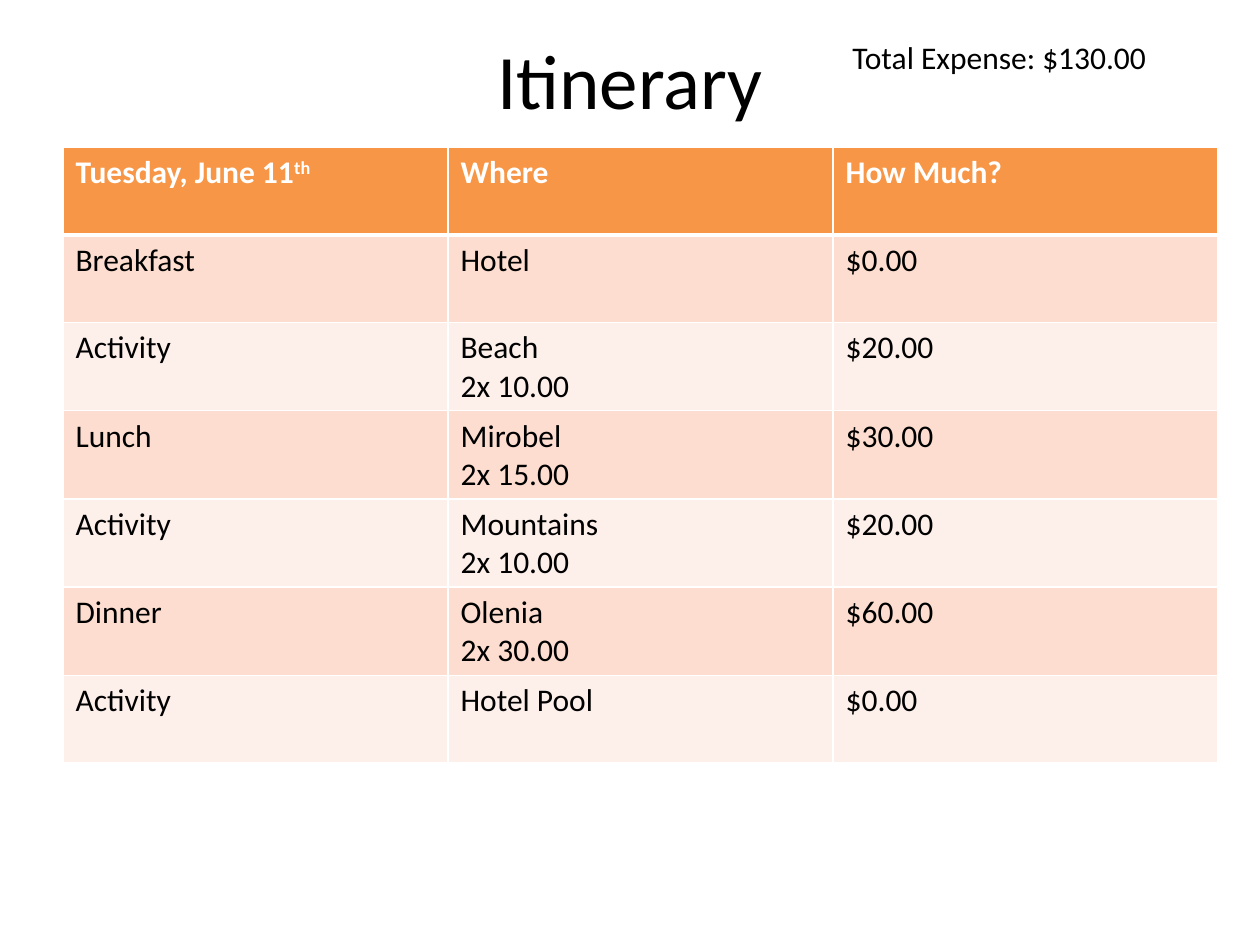
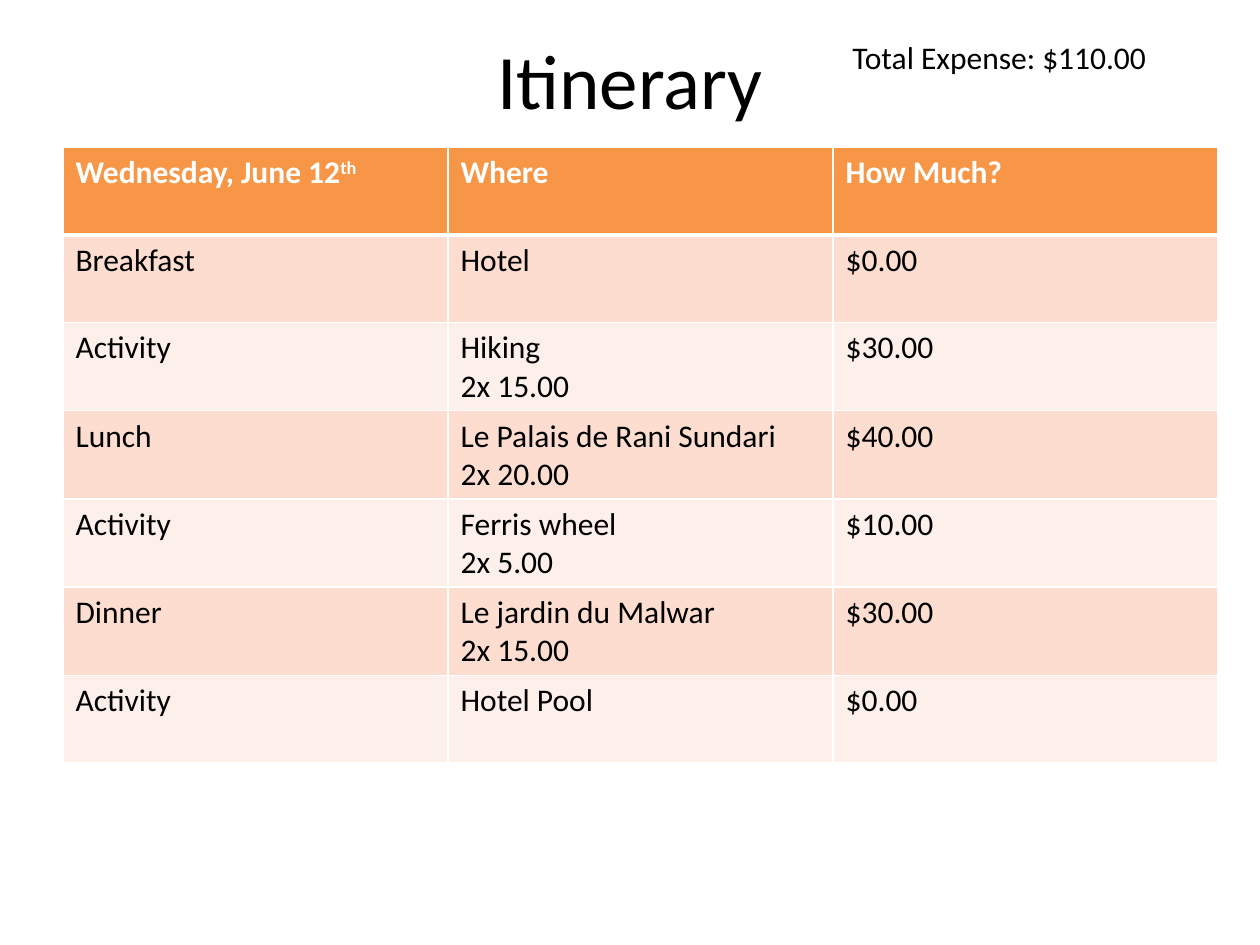
from pptx import Presentation
from pptx.dml.color import RGBColor
from pptx.enum.text import MSO_ANCHOR, PP_ALIGN
from pptx.oxml import parse_xml
from pptx.oxml.ns import nsdecls
from pptx.util import Inches, Pt

# Shared look
ORANGE = RGBColor(0xF7, 0x96, 0x46)
PEACH = RGBColor(0xFC, 0xDD, 0xCF)
CREAM = RGBColor(0xFD, 0xEF, 0xE9)
WHITE = RGBColor(0xFF, 0xFF, 0xFF)
BLACK = RGBColor(0x00, 0x00, 0x00)
TITLE = {"name": "Calibri", "size": Pt(44)}
BODY = {"name": "Calibri", "size": Pt(18), "bold": False}
HEADER = {**BODY, "bold": True}

# Each day: date, then slot, place and price per person
TRAVELLERS = 2
DAYS = [
    ("Tuesday, June 11", [
        ("Breakfast", "Hotel", 0), ("Activity", "Beach", 10),
        ("Lunch", "Mirobel", 15), ("Activity", "Mountains", 10),
        ("Dinner", "Olenia", 30), ("Activity", "Hotel Pool", 0)]),
    ("Wednesday, June 12", [
        ("Breakfast", "Hotel", 0), ("Activity", "Hiking", 15),
        ("Lunch", "Le Palais de Rani Sundari", 20), ("Activity", "Ferris wheel", 5),
        ("Dinner", "Le jardin du Malwar", 15), ("Activity", "Hotel Pool", 0)]),
]

deck = Presentation()
deck.slide_width, deck.slide_height = Inches(10), Inches(7.5)
W, H = deck.slide_width, deck.slide_height
MARGIN = int(W * 0.05)
COLUMN, ROW = int(W * 0.3056), int(H * 0.0926)


def write(frame, text, style, color, align=PP_ALIGN.LEFT):
    """Fill a text frame, one paragraph per line of text."""
    frame.text = text
    frame.word_wrap = True
    for paragraph in frame.paragraphs:
        paragraph.alignment = align
        for run in paragraph.runs:
            run.font.color.rgb = color
            for key, value in style.items():
                setattr(run.font, key, value)


def paint(cell, fill, bottom):
    """Give a cell white borders and a solid fill."""
    for side, width in {"L": 1, "R": 1, "T": 1, "B": bottom}.items():
        cell._tc.get_or_add_tcPr().append(parse_xml(
            f'<a:ln{side} {nsdecls("a")} w="{Pt(width)}"><a:solidFill>'
            f'<a:srgbClr val="{WHITE}"/></a:solidFill></a:ln{side}>'))
    cell.fill.solid()
    cell.fill.fore_color.rgb = fill


for date, plan in DAYS:
    slide = deck.slides.add_slide(deck.slide_layouts[6])

    # Title
    heading = slide.shapes.add_textbox(MARGIN, 0, W - 2 * MARGIN, H // 6).text_frame
    write(heading, "Itinerary", TITLE, BLACK, PP_ALIGN.CENTER)
    heading.vertical_anchor = MSO_ANCHOR.MIDDLE

    # Total of the day
    spent = TRAVELLERS * sum(price for _, _, price in plan)
    total = slide.shapes.add_textbox(W * 2 // 3, H // 30, int(W * 0.308), int(H * 0.054))
    write(total.text_frame, f"Total Expense: ${spent:.2f}", BODY, BLACK)

    # Schedule rows
    lines = [(date, "Where", "How Much?")]
    for slot, place, price in plan:
        where = f"{place}\n{TRAVELLERS}x {price:.2f}" if price else place
        lines.append((slot, where, f"${TRAVELLERS * price:.2f}"))

    schedule = slide.shapes.add_table(
        len(lines), 3, MARGIN, int(H * 0.156), 3 * COLUMN, len(lines) * ROW).table
    for column in schedule.columns:
        column.width = COLUMN
    for r, line in enumerate(lines):
        schedule.rows[r].height = ROW
        band = PEACH if r % 2 else CREAM
        fill, style, color, bottom = (band, BODY, BLACK, 1) if r else (ORANGE, HEADER, WHITE, 3)
        for c, text in enumerate(line):
            cell = schedule.cell(r, c)
            write(cell.text_frame, text, style, color)
            paint(cell, fill, bottom)
            if r == 1:
                cell._tc.tcPr.find("{*}lnT").set("w", str(Pt(3)))

    # Raised ordinal after the date
    ordinal = schedule.cell(0, 0).text_frame.paragraphs[0].add_run()
    ordinal.text = "th"
    ordinal.font.color.rgb = WHITE
    for key, value in HEADER.items():
        setattr(ordinal.font, key, value)
    ordinal._r.get_or_add_rPr().set("baseline", "30000")

deck.save("out.pptx")
